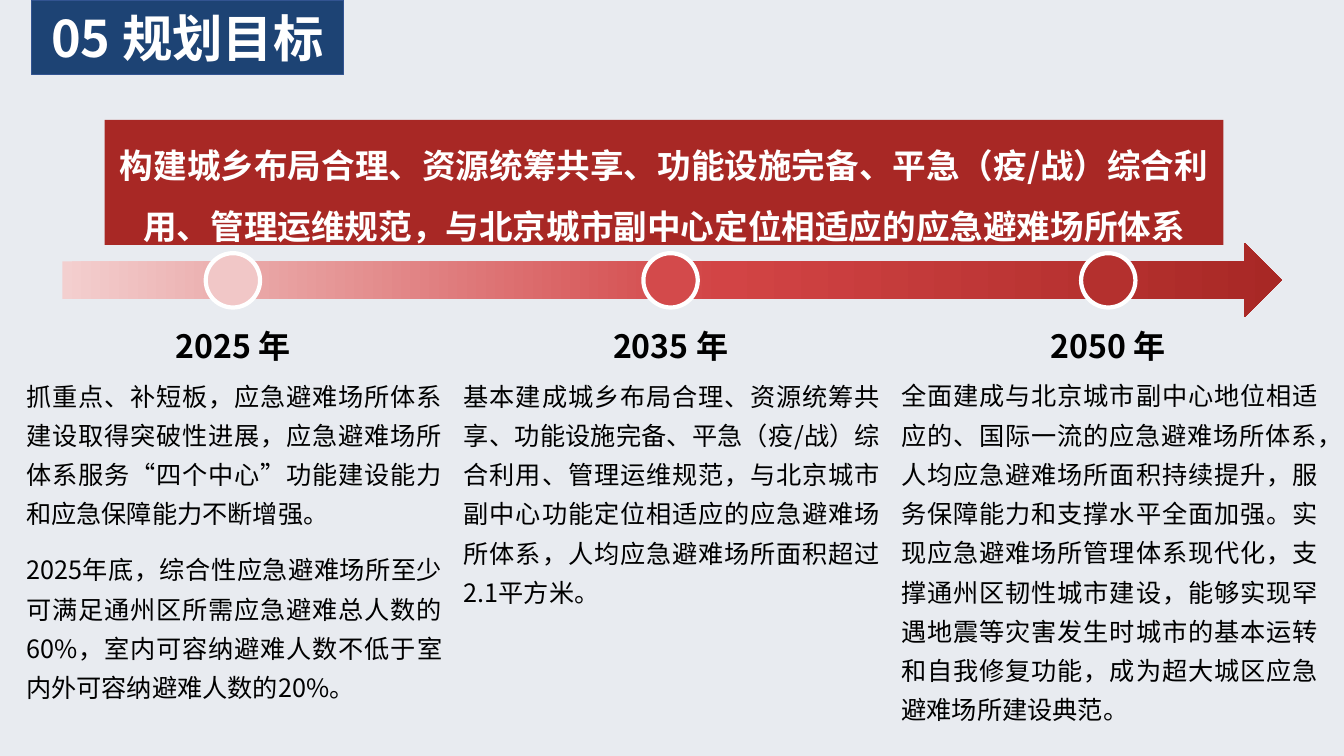
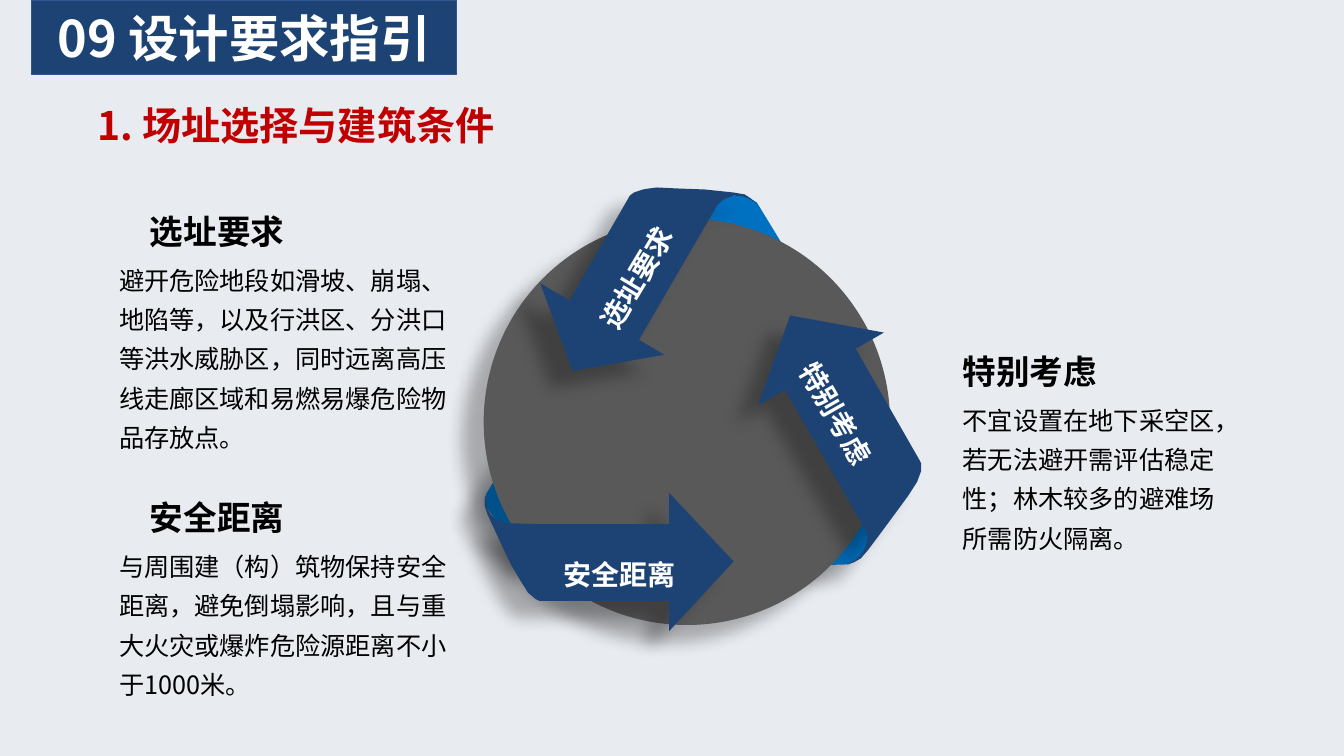
from copy import deepcopy
from lxml import etree
from pptx import Presentation
from pptx.dml.color import RGBColor
from pptx.enum.shapes import MSO_SHAPE
from pptx.enum.text import MSO_ANCHOR, MSO_AUTO_SIZE, PP_ALIGN
from pptx.oxml.ns import qn
from pptx.util import Cm, Pt

# Shared style
FONT = "Noto Sans CJK SC"
PAPER, NAVY, NAVY_LINE = "E8EBF0", "1D4374", "325491"
RED, HEADING_RED, BLUE, GREY = "A82825", "C00000", "0070C0", "595959"
WHITE, BLACK = "FFFFFF", "000000"

# Slide 1 content
GOAL = "构建城乡布局合理、资源统筹共享、功能设施完备、平急（疫/战）综合利用、管理运维规范，与北京城市副中心定位相适应的应急避难场所体系"
ARROW_STOPS = [(0, "F3CFCF"), (0.54, "D24445"), (1, RED)]
# year, marker colour, line spacing, paragraphs
STAGES = [
    ("2025 年", "F1C7C7", 1.3, [
        "抓重点、补短板，应急避难场所体系建设取得突破性进展，应急避难场所体系服务“四个中心”功能建设能力和应急保障能力不断增强。",
        "2025年底，综合性应急避难场所至少可满足通州区所需应急避难总人数的60%，室内可容纳避难人数不低于室内外可容纳避难人数的20%。"]),
    ("2035 年", "D34A4B", 1.3, [
        "基本建成城乡布局合理、资源统筹共享、功能设施完备、平急（疫/战）综合利用、管理运维规范，与北京城市副中心功能定位相适应的应急避难场所体系，人均应急避难场所面积超过2.1平方米。"]),
    ("2050 年", "B4302E", Pt(28), [
        "全面建成与北京城市副中心地位相适应的、国际一流的应急避难场所体系，人均应急避难场所面积持续提升，服务保障能力和支撑水平全面加强。实现应急避难场所管理体系现代化，支撑通州区韧性城市建设，能够实现罕遇地震等灾害发生时城市的基本运转和自我修复功能，成为超大城区应急避难场所建设典范。"]),
]

# Slide 2 content: heading, heading left and top, body left and width, body
TOPICS = [
    ("选址要求", 3.45, 4.85, 2.67, 9.17,
     "避开危险地段如滑坡、崩塌、地陷等，以及行洪区、分洪口等洪水威胁区，同时远离高压线走廊区域和易燃易爆危险物品存放点。"),
    ("安全距离", 3.45, 12.07, 2.67, 9.17,
     "与周围建（构）筑物保持安全距离，避免倒塌影响，且与重大火灾或爆炸危险源距离不小于1000米。"),
    ("特别考虑", 23.93, 8.38, 23.93, 7.29,
     "不宜设置在地下采空区，若无法避开需评估稳定性；林木较多的避难场所需防火隔离。"),
]
# Arrow label, box, rotation
LABELS = [
    ("选址要求", (13.97, 6.27, 3.86, 1.27), 300.9),
    ("特别考虑", (19.43, 9.7, 3.58, 1.27), 60.4),
    ("安全距离", (13.87, 13.67, 3.51, 1.27), 0),
]
# Outlines in hundredths of an inch
FOLDS = [
    [(625, 407), (530, 562), (482, 503), (483, 489), (556, 369)],
    [(696, 486), (887, 481), (855, 553), (842, 560), (694, 564)],
    [(759, 361), (661, 200), (738, 193), (751, 201), (826, 324)],
]
RIBBONS = [
    [(784, 313), (877, 330), (849, 346), (912, 456), (914, 460), (914, 467),
     (910, 478), (901, 492), (887, 511), (873, 530), (861, 546), (854, 554),
     (847, 558), (840, 560), (848, 556), (853, 552), (858, 544), (861, 534),
     (859, 527), (845, 502), (779, 387), (752, 402)],
    [(483, 488), (483, 502), (484, 506), (487, 510), (491, 514), (496, 517),
     (502, 519), (537, 520), (664, 520), (664, 489), (728, 557), (664, 626),
     (664, 596), (535, 596), (531, 594), (524, 588), (517, 577), (507, 560),
     (496, 537), (484, 511), (481, 502), (481, 494)],
    [(652, 186), (672, 187), (699, 188), (728, 191), (739, 193), (745, 197),
     (751, 202), (743, 197), (738, 195), (728, 194), (718, 198), (712, 203),
     (708, 210), (634, 337), (659, 352), (568, 368), (536, 281), (565, 298),
     (625, 194), (629, 191), (638, 188), (644, 187)],
]


def rgb(color):
    return RGBColor.from_string(color)


def write(shape, texts, size, color, bold=False, align=PP_ALIGN.LEFT,
          spacing=None, before=0, insets=(0.25, 0.13)):
    """Fill a shape with paragraphs in one style; before is the gap between them."""
    tf = shape.text_frame
    tf.text = "\n".join(texts)
    tf.word_wrap = True
    tf.auto_size = MSO_AUTO_SIZE.NONE
    tf.margin_left = tf.margin_right = Cm(insets[0])
    tf.margin_top = tf.margin_bottom = Cm(insets[1])
    for i, p in enumerate(tf.paragraphs):
        p.alignment = align
        p.space_before = Pt(before if i else 0)
        if spacing:
            p.line_spacing = spacing
        for r in p.runs:
            r.font.size, r.font.bold, r.font.name = Pt(size), bold, FONT
            r.font.color.rgb = rgb(color)
            etree.SubElement(r._r.get_or_add_rPr(), qn("a:ea"), typeface=FONT)
    return tf


def add_text(s, box, texts, size, color, **style):
    sp = s.shapes.add_textbox(*map(Cm, box))
    tf = write(sp, texts, size, color, **style)
    tf.vertical_anchor = MSO_ANCHOR.TOP
    return sp


def paint(sp, fill, line=None, width=1):
    sp.shadow.inherit = False
    if fill:
        sp.fill.solid()
        sp.fill.fore_color.rgb = rgb(fill)
    if line:
        sp.line.color.rgb = rgb(line)
        sp.line.width = Pt(width)
    else:
        sp.line.fill.background()
    return sp


def add_shape(s, kind, box, fill, line=None, width=1):
    return paint(s.shapes.add_shape(kind, *map(Cm, box)), fill, line, width)


def add_outline(s, points, fill):
    builder = s.shapes.build_freeform(*points[0], scale=Cm(2.54) / 100)
    builder.add_line_segments(points[1:], close=True)
    return paint(builder.convert_to_shape(), fill)


def cast_shadow(sp):
    effects = sp._element.spPr.find(qn("a:effectLst"))
    shadow = etree.SubElement(effects, qn("a:outerShdw"), blurRad=str(Pt(11.8)),
                              dist=str(Pt(19.7)), dir="8460000", algn="ctr",
                              rotWithShape="0")
    color = etree.SubElement(shadow, qn("a:srgbClr"), val=BLACK)
    etree.SubElement(color, qn("a:alpha"), val="28000")


def add_slide(prs, title, width):
    s = prs.slides.add_slide(prs.slide_layouts[5])
    band = s.shapes.title
    band.left, band.top, band.width, band.height = map(Cm, (0.79, 0, width, 1.88))
    paint(band, NAVY, NAVY_LINE)
    tf = write(band, [title], 36, WHITE, bold=True, align=PP_ALIGN.CENTER)
    tf.vertical_anchor = MSO_ANCHOR.MIDDLE
    return s


def build_goals(prs):
    s = add_slide(prs, "05 规划目标", 7.87)
    # Goal banner
    banner = add_shape(s, MSO_SHAPE.RECTANGLE, (2.64, 3.02, 28.19, 3.15), RED)
    tf = write(banner, [GOAL], 24, WHITE, bold=True, align=PP_ALIGN.CENTER, spacing=1.5)
    tf.vertical_anchor = MSO_ANCHOR.TOP
    # Timeline arrow
    arrow = add_shape(s, MSO_SHAPE.RIGHT_ARROW, (1.57, 6.12, 30.73, 1.88), None)
    arrow.fill.gradient()
    arrow.fill.gradient_angle = 0
    stops = arrow._element.spPr.find(".//" + qn("a:gsLst"))
    stops.append(deepcopy(stops[0]))
    for stop, (position, color) in zip(arrow.fill.gradient_stops, ARROW_STOPS):
        stop.position = position
        stop.color.rgb = rgb(color)
    # One column per stage
    pitch, dot, year_w = 11.03, 1.37, 6.53
    for i, (year, color, spacing, texts) in enumerate(STAGES):
        center = 5.87 + i * pitch
        add_shape(s, MSO_SHAPE.OVAL, (center - dot / 2, 6.38, dot, dot), color, WHITE, 3)
        add_text(s, (center - year_w / 2, 8.23, year_w, 0.97), [year], 22.9, BLACK,
                 bold=True, align=PP_ALIGN.CENTER, insets=(0, 0))
        add_text(s, (0.66 + i * pitch, 9.37, 10.49, 8.33), texts, 18, BLACK,
                 align=PP_ALIGN.JUSTIFY, spacing=spacing, before=12, insets=(0, 0))


def build_design(prs):
    s = add_slide(prs, "09 设计要求指引", 10.72)
    # Folded ribbons around the disc
    for points in FOLDS:
        cast_shadow(add_outline(s, points, BLUE))
    cast_shadow(add_shape(s, MSO_SHAPE.OVAL, (12.19, 5.51, 10.24, 10.24), GREY))
    for points in RIBBONS:
        cast_shadow(add_outline(s, points, NAVY))
    for label, box, angle in LABELS:
        sp = add_text(s, box, [label], 20, WHITE, bold=True,
                      align=PP_ALIGN.CENTER, spacing=1.3)
        sp.rotation = angle
    # Topic texts
    style = dict(spacing=1.3, insets=(0.33, 0.15))
    for head, head_x, top, body_x, body_w, body in TOPICS:
        add_text(s, (head_x, top, 4.83, 1.55), [head], 24, BLACK, bold=True, **style)
        add_text(s, (body_x, top + 1.45, body_w, 5.23), [body], 18, BLACK, **style)
    # Section heading
    add_text(s, (2.21, 2.62, 25.27, 1.24), ["1. 场址选择与建筑条件"], 28, HEADING_RED,
             bold=True, spacing=Pt(28))


def main():
    prs = Presentation()
    prs.slide_width, prs.slide_height = Cm(33.87), Cm(19.05)
    paper = prs.slide_master.background.fill
    paper.solid()
    paper.fore_color.rgb = rgb(PAPER)
    build_goals(prs)
    build_design(prs)
    prs.save("out.pptx")


if __name__ == "__main__":
    main()
